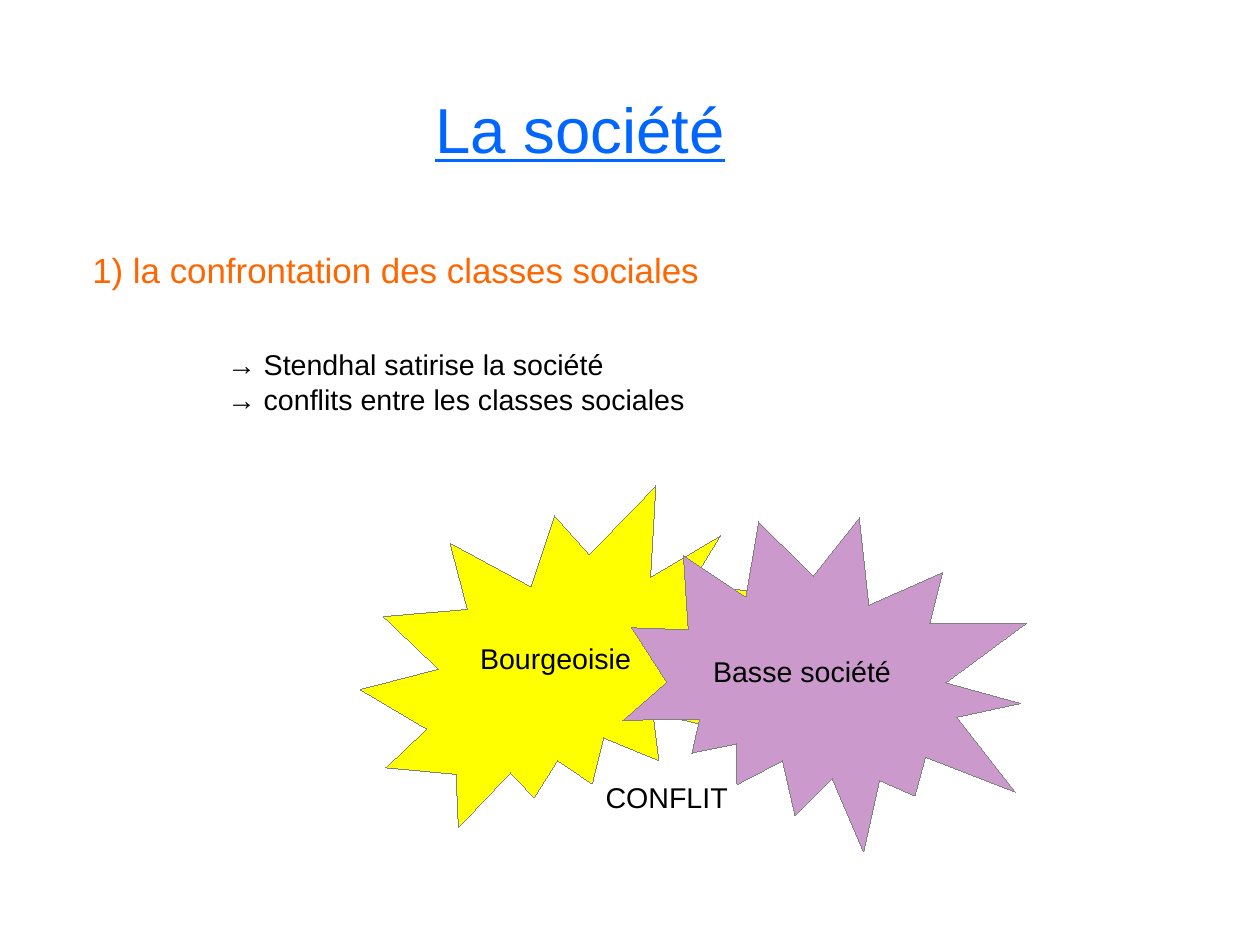
import dataclasses

import pptx
import pptx.dml.color
import pptx.enum.shapes
import pptx.enum.text
import pptx.util

Inches = pptx.util.Inches
Align = pptx.enum.text.PP_ALIGN
Anchor = pptx.enum.text.MSO_ANCHOR


@dataclasses.dataclass(frozen=True)
class Theme:
    """Colours, font, type sizes and line width of the slide."""
    font: str = "Arial"
    title: str = "0066FF"
    heading: str = "FF6600"
    text: str = "000000"
    bourgeoisie: str = "FFFF00"
    lower_class: str = "CC99CC"
    outline: str = "808080"
    title_size: int = 40
    heading_size: int = 22
    text_size: int = 18
    hairline: float = 0.01


THEME = Theme()


def colour(code):
    """Turn a hex code into a colour."""
    return pptx.dml.color.RGBColor.from_string(code)


def write(shape, text, size=THEME.text_size, ink=THEME.text, underline=None,
          align=Align.LEFT, anchor=Anchor.TOP, wrap=True, lift=0):
    """Fill a shape with one formatted paragraph per line of text."""
    frame = shape.text_frame
    frame.text = text
    frame.word_wrap = wrap
    frame.auto_size = pptx.enum.text.MSO_AUTO_SIZE.NONE
    frame.vertical_anchor = anchor
    frame.margin_left, frame.margin_right = Inches(0.1), Inches(0.1 + lift)
    frame.margin_top, frame.margin_bottom = Inches(0.05), Inches(0.05 + lift)
    for para in frame.paragraphs:
        para.alignment = align
        for span in para.runs:
            span.font.name = THEME.font
            span.font.size = pptx.util.Pt(size)
            span.font.color.rgb = colour(ink)
            span.font.underline = underline


def add_title(page, box, text):
    """Place and format the title placeholder."""
    title = page.shapes.title
    title.left, title.top, title.width, title.height = map(Inches, box)
    write(title, text, size=THEME.title_size, ink=THEME.title, underline=True)


def add_text(page, box, text, **style):
    """Add a text box."""
    write(page.shapes.add_textbox(*map(Inches, box)), text, **style)


def add_burst(page, box, fill, rotation=0):
    """Add a jagged burst and return it."""
    burst = page.shapes.add_shape(
        pptx.enum.shapes.MSO_SHAPE.EXPLOSION2, *map(Inches, box))
    burst.rotation = rotation
    burst.shadow.inherit = False
    burst.fill.solid()
    burst.fill.fore_color.rgb = colour(fill)
    burst.line.color.rgb = colour(THEME.outline)
    burst.line.width = pptx.util.Pt(THEME.hairline)
    return burst


def add_argument(page, box):
    """Add the heading and, indented below it, its two points."""
    left, top, width, height = box
    add_text(page, (left, top, width, 0.44),
             "1) la confrontation des classes sociales",
             size=THEME.heading_size, ink=THEME.heading)
    add_text(page, (left + 1.18, top + 0.86, 4.24, height - 0.86),
             "→ Stendhal satirise la société\n→ conflits entre les classes sociales")


def add_conflict(page, box):
    """Add the two clashing social classes and their caption."""
    left, top, width, height = box
    bourgeoisie = add_burst(page, (left, top, 3.78, 2.99), THEME.bourgeoisie)
    write(bourgeoisie, "Bourgeoisie", align=Align.CENTER,
          anchor=Anchor.MIDDLE, wrap=False, lift=0.08)
    add_burst(page, (left + width - 3.44, top + height - 3.27, 3.44, 3.27),
              THEME.lower_class, rotation=50.8)
    add_text(page, (left + 2.99, top + 1.42, 1.89, 0.66), "Basse société")
    add_text(page, (left + 2.05, top + 2.52, 1.65, 0.38), "CONFLIT")


def main():
    """Build and save the slide."""
    deck = pptx.Presentation()
    deck.slide_width = pptx.util.Cm(28)
    deck.slide_height = pptx.util.Cm(21)
    page = deck.slides.add_slide(deck.slide_layouts.get_by_name("Title Only"))
    add_title(page, (3.71, 0.74, 4.41, 0.72), "La société")
    add_argument(page, (0.71, 2.13, 8.98, 1.54))
    add_conflict(page, (3.15, 4.25, 5.88, 3.38))
    deck.save("out.pptx")


if __name__ == "__main__":
    main()
